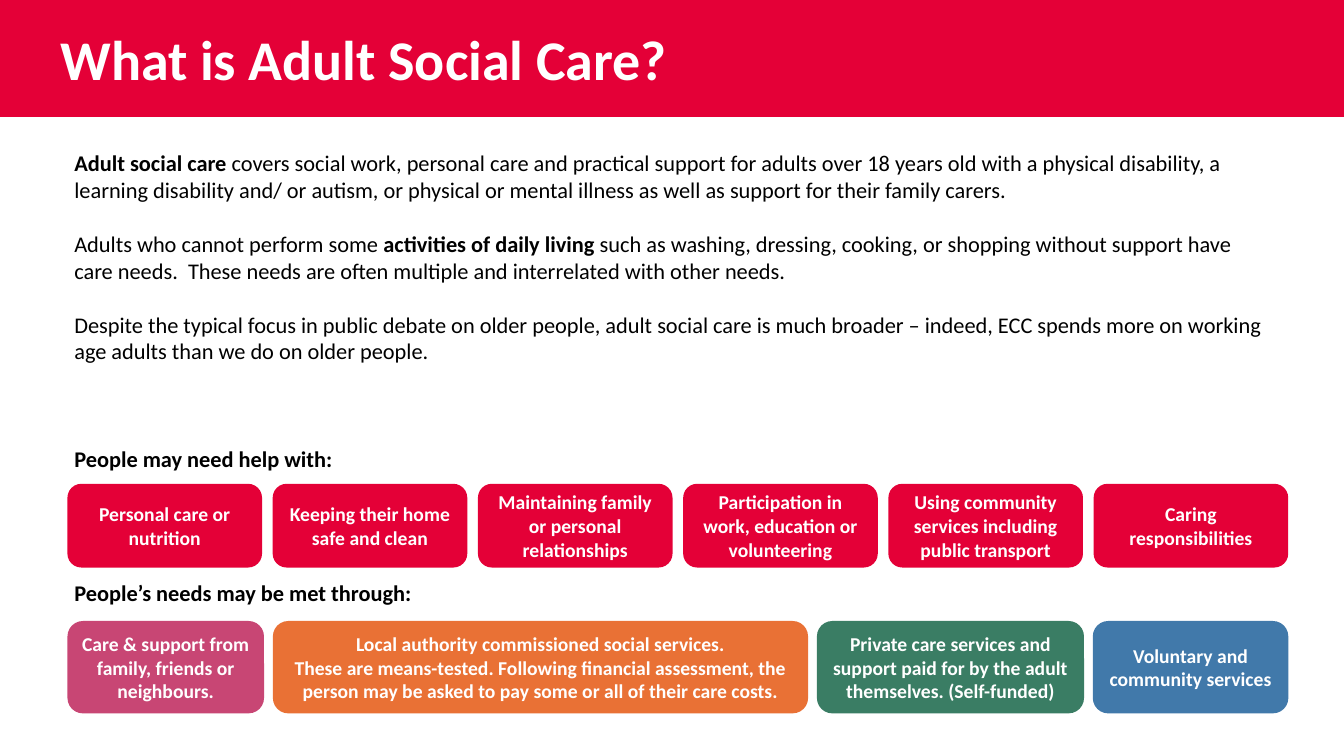
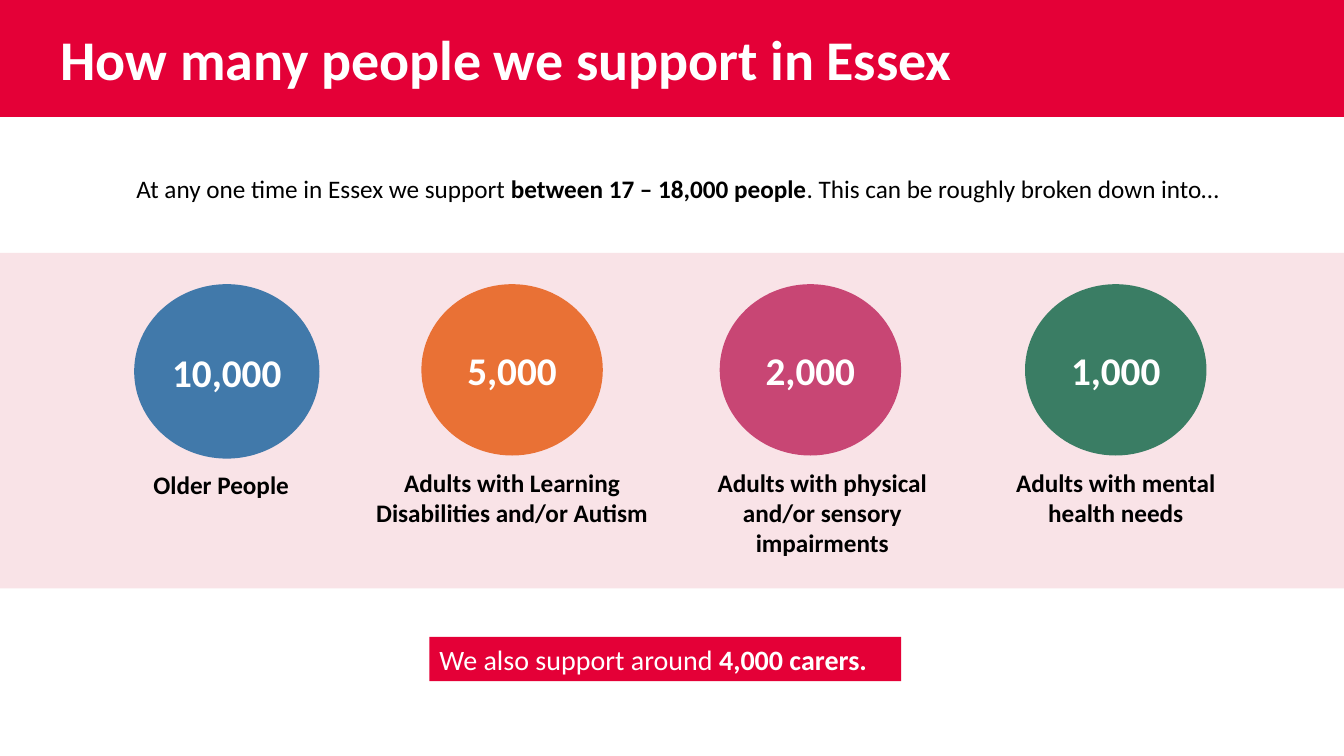
from dataclasses import dataclass

from pptx import Presentation
from pptx.dml.color import RGBColor
from pptx.enum.shapes import MSO_SHAPE
from pptx.enum.text import MSO_ANCHOR, MSO_AUTO_SIZE, PP_ALIGN
from pptx.util import Pt

RECT, ROUND, OVAL = MSO_SHAPE.RECTANGLE, MSO_SHAPE.ROUNDED_RECTANGLE, MSO_SHAPE.OVAL
LEFT, MID = PP_ALIGN.LEFT, PP_ALIGN.CENTER
TOP, CENTRE = MSO_ANCHOR.TOP, MSO_ANCHOR.MIDDLE
FIXED = MSO_AUTO_SIZE.NONE
WIDE, HIGH = 960, 540


@dataclass(frozen=True)
class Theme:
    font: str = "Calibri"
    red: str = "E40037"
    blush: str = "F9E3E7"
    pink: str = "C84674"
    orange: str = "E97135"
    green: str = "3A7D64"
    blue: str = "4179AA"
    white: str = "FFFFFF"
    black: str = "000000"
    title: int = 40
    figure: int = 28
    callout: int = 20
    label: int = 18
    body: int = 16
    box: int = 14


THEME = Theme()


def write(frame, text, size=THEME.body, color=THEME.black, bold=False,
          align=LEFT, anchor=TOP, gap=0):
    """Fill a frame: a line per paragraph, ** switches bold on and off."""
    frame.word_wrap = True
    frame.auto_size = FIXED
    frame.vertical_anchor = anchor
    for row, line in enumerate(text.split("\n")):
        para = frame.add_paragraph() if row else frame.paragraphs[0]
        para.alignment = align
        para.space_before = Pt(gap if row else 0)
        for part, words in enumerate(line.split("**")):
            if not words:
                continue
            run = para.add_run()
            run.text = words
            run.font.name = THEME.font
            run.font.size = Pt(size)
            run.font.bold = bold or part % 2 == 1
            run.font.color.rgb = RGBColor.from_string(color)


class Deck:
    def __init__(self):
        self.show = Presentation()
        self.show.slide_width, self.show.slide_height = Pt(WIDE), Pt(HIGH)
        self.slide = None

    def start(self, title):
        """Add a slide whose title is the red band at the top."""
        self.slide = self.show.slides.add_slide(self.show.slide_layouts[5])
        band = self.slide.shapes.title
        band.left, band.top, band.width, band.height = Pt(0), Pt(0), Pt(WIDE), Pt(83.5)
        band.fill.solid()
        band.fill.fore_color.rgb = RGBColor.from_string(THEME.red)
        band.text_frame.margin_left = Pt(43.2)
        write(band.text_frame, title, size=THEME.title, color=THEME.white,
              bold=True, anchor=CENTRE)

    def text(self, words, left, top, width, height, inset=True, **style):
        frame = self.slide.shapes.add_textbox(
            Pt(left), Pt(top), Pt(width), Pt(height)).text_frame
        if not inset:
            frame.margin_left = frame.margin_right = Pt(0)
            frame.margin_top = frame.margin_bottom = Pt(0)
        write(frame, words, **style)

    def shape(self, kind, fill, left, top, width, height, words="", **style):
        item = self.slide.shapes.add_shape(
            kind, Pt(left), Pt(top), Pt(width), Pt(height))
        item.shadow.inherit = False
        item.fill.solid()
        item.fill.fore_color.rgb = RGBColor.from_string(fill)
        item.line.fill.background()
        if words:
            look = dict(color=THEME.white, bold=True, align=MID, anchor=CENTRE)
            write(item.text_frame, words, **{**look, **style})

    def row(self, boxes, left, top, height, gap):
        """Lay (words, fill, width) boxes side by side."""
        for words, fill, width in boxes:
            self.shape(ROUND, fill, left, top, width, height, words, size=THEME.box)
            left += width + gap


def about(deck):
    deck.start("What is Adult Social Care?")

    # Introduction
    deck.text(
        "**Adult social care** covers social work, personal care and practical support "
        "for adults over 18 years old with a physical disability, a learning disability "
        "and/ or autism, or physical or mental illness as well as support for their "
        "family carers.\n"
        "Adults who cannot perform some **activities of daily living** such as washing, "
        "dressing, cooking, or shopping without support have care needs.  These needs "
        "are often multiple and interrelated with other needs.\n"
        "Despite the typical focus in public debate on older people, adult social care "
        "is much broader – indeed, ECC spends more on working age adults than we do on "
        "older people.",
        46, 103, 870.5, 170, gap=19.3)

    # Needs
    edge = 48.2
    deck.text("People may need help with:", 46, 314.5, 870.5, 27, bold=True)
    needs = ("Personal care or nutrition", "Keeping their home safe and clean",
             "Maintaining family or personal relationships",
             "Participation in work, education or volunteering",
             "Using community services including public transport",
             "Caring responsibilities")
    deck.row([(need, THEME.red, 139) for need in needs], edge, 345.6, 59.8, 7.6)

    # Sources of help
    deck.text("People’s needs may be met through:", 46, 410, 870.5, 27, bold=True)
    deck.row([
        ("Care & support from family, friends or neighbours.", THEME.pink, 140.4),
        ("Local authority commissioned social services.\n"
         "These are means-tested. Following financial assessment, the person may be "
         "asked to pay some or all of their care costs.", THEME.orange, 382.3),
        ("Private care services and support paid for by the adult themselves. "
         "(Self-funded)", THEME.green, 190.8),
        ("Voluntary and community services", THEME.blue, 139.7),
    ], edge, 443.6, 66, 6.3)


def numbers(deck):
    deck.start("How many people we support in Essex")
    deck.text("At any one time in Essex we support **between 17 – 18,000 people**. "
              "This can be roughly broken down into…",
              90, 123.8, 788.4, 22, inset=False, size=THEME.label, align=MID)

    # Groups: figure, colour, circle centre and size, label, its centre, top and width
    deck.shape(RECT, THEME.blush, 0, 180.6, WIDE, 239.8)
    groups = (
        ("10,000", THEME.blue, 162, 132.4, 124.6, "Older People", 158, 331.6, 155),
        ("5,000", THEME.orange, 365.8, 129.6, 122.4,
         "Adults with Learning Disabilities and/or Autism", 365.8, 330, 220),
        ("2,000", THEME.pink, 578.9, 129.6, 122.4,
         "Adults with physical and/or sensory impairments", 587.4, 330, 200),
        ("1,000", THEME.green, 797, 129.6, 122.4,
         "Adults with mental health needs", 797, 330, 176),
    )
    for count, fill, mid, width, height, label, axis, top, span in groups:
        deck.shape(OVAL, fill, mid - width / 2, 203, width, height, count,
                   size=THEME.figure)
        deck.text(label, axis - span / 2, top, span, 74, size=THEME.label,
                  bold=True, align=MID)

    # Carers
    deck.shape(RECT, THEME.red, 306.7, 455, 337, 31.6,
               "We also support around **4,000 carers.**",
               size=THEME.callout, bold=False, align=LEFT)


def main():
    deck = Deck()
    about(deck)
    numbers(deck)
    deck.show.save("out.pptx")


if __name__ == "__main__":
    main()
